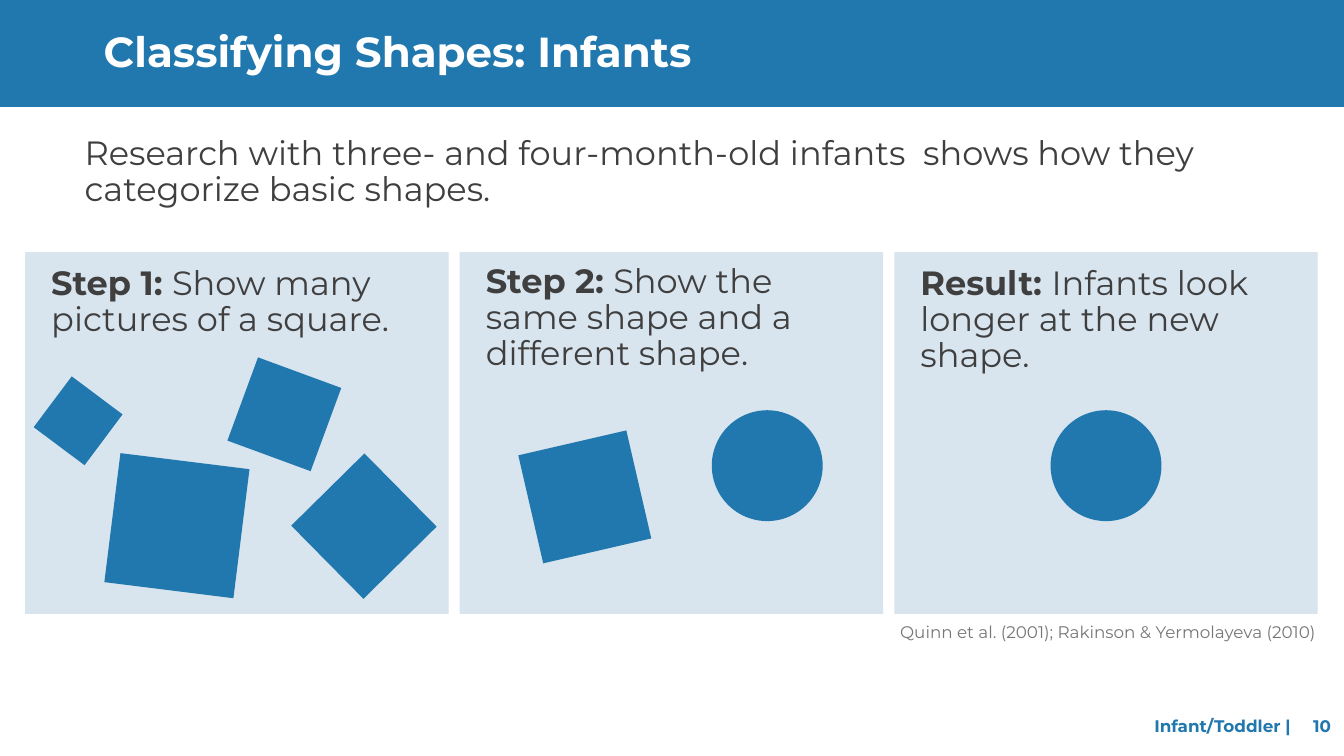
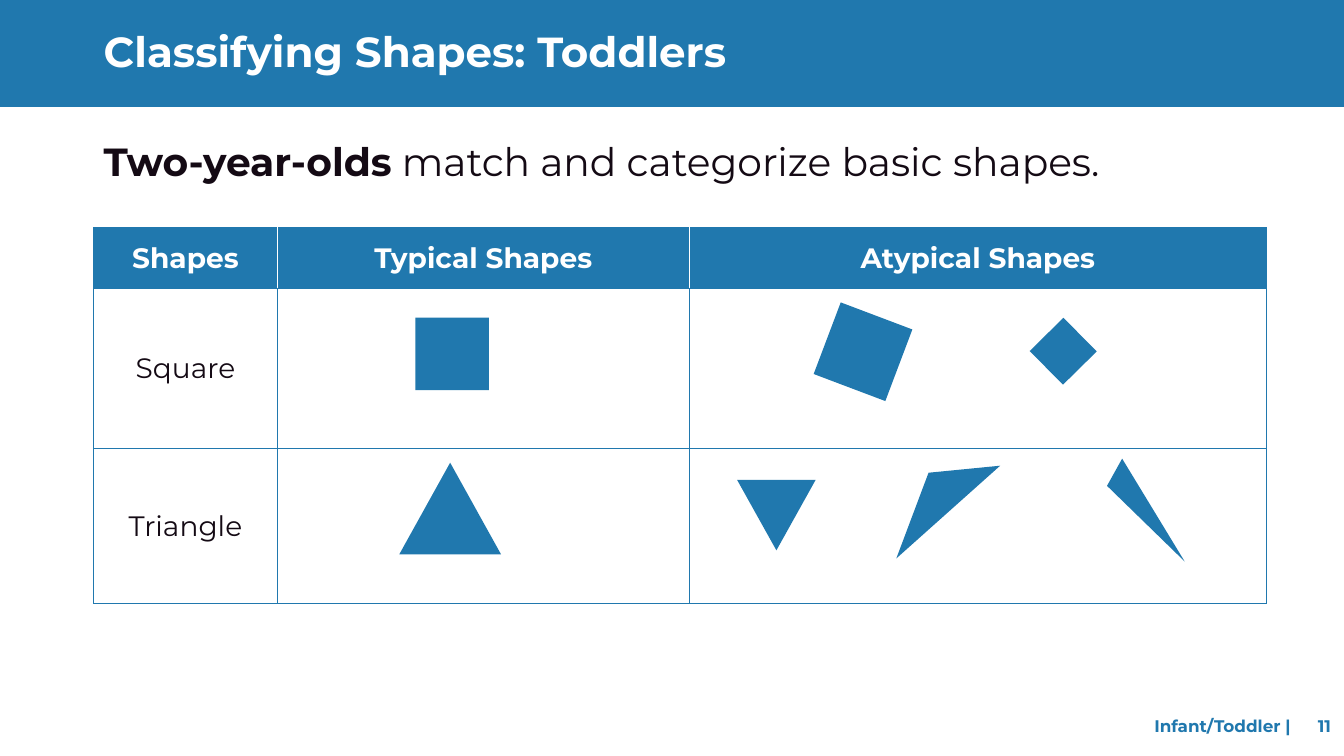
from lxml import etree
from pptx import Presentation
from pptx.dml.color import RGBColor
from pptx.enum.shapes import MSO_SHAPE
from pptx.enum.text import MSO_ANCHOR, PP_ALIGN
from pptx.oxml.ns import qn
from pptx.util import Inches, Pt

BLUE = RGBColor(0x20, 0x78, 0xAE)
PALE_BLUE = RGBColor(0xD8, 0xE4, 0xEE)
WHITE = RGBColor(0xFF, 0xFF, 0xFF)
DARK_GREY = RGBColor(0x3F, 0x3F, 0x3F)
MID_GREY = RGBColor(0x76, 0x76, 0x76)
NEAR_BLACK = RGBColor(0x14, 0x0A, 0x14)

FONT = "Montserrat"
RECTANGLE = MSO_SHAPE.RECTANGLE
OVAL = MSO_SHAPE.OVAL
TRIANGLE = MSO_SHAPE.ISOSCELES_TRIANGLE
LEFT, CENTER, RIGHT = PP_ALIGN.LEFT, PP_ALIGN.CENTER, PP_ALIGN.RIGHT
TOP, MIDDLE = MSO_ANCHOR.TOP, MSO_ANCHOR.MIDDLE

SLIDE_WIDTH, SLIDE_HEIGHT = 13.33, 7.5
PANEL_LEFT, PANEL_TOP, PANEL_WIDTH, PANEL_HEIGHT = 0.25, 2.5, 4.2, 3.59
PANEL_PITCH = 4.31

PANELS = [
    ("Step 1: ", "Show many pictures of a square.", 2.59),
    ("Step 2: ", "Show the same shape and a different shape.", 2.57),
    ("Result: ", "Infants look longer at the new shape.", 2.59),
]
INFANT_SQUARES = [
    (1.11, 4.57, 1.29, 7.1),
    (0.46, 3.86, 0.63, 36.8),
    (3.1, 4.71, 1.02, 315.4),
    (2.38, 3.67, 0.88, 20.2),
    (5.25, 4.38, 1.1, 347),
]
INFANT_CIRCLES = [(7.06, 4.07, 1.1), (10.42, 4.07, 1.1)]

TABLE_ROWS = [
    ("Shapes", "Typical Shapes", "Atypical Shapes"),
    ("Square", "", ""),
    ("Triangle", "", ""),
]
COLUMN_WIDTHS = (1.82, 4.09, 5.72)
ROW_HEIGHTS = (0.6, 1.59, 1.54)
TODDLER_SHAPES = [
    (RECTANGLE, 4.12, 3.15, 0.73, 0.72, 0),
    (RECTANGLE, 10.31, 3.25, 0.47, 0.47, 45.4),
    (RECTANGLE, 8.18, 3.11, 0.76, 0.76, 20.7),
    (TRIANGLE, 3.96, 4.59, 1.01, 0.91, 0),
    (TRIANGLE, 7.31, 4.76, 0.78, 0.7, 180),
]
SCALENE_TRIANGLES = [
    [(9.92, 4.62), (8.89, 5.54), (9.21, 4.69)],
    [(11.13, 4.55), (11.75, 5.57), (10.98, 4.82)],
]


def style_paragraph(paragraph, size, color, bold=None, align=LEFT, spacing=None):
    paragraph.alignment = align
    paragraph.line_spacing = spacing
    font = paragraph.font
    font.name = FONT
    font.size = Pt(size)
    font.color.rgb = color
    font.bold = bold


def add_text(slide, left, top, width, height, text, size, color,
             lead="", bold=None, align=LEFT, spacing=None, anchor=TOP):
    box = slide.shapes.add_textbox(Inches(left), Inches(top), Inches(width), Inches(height))
    frame = box.text_frame
    frame.word_wrap = True
    frame.vertical_anchor = anchor
    paragraph = frame.paragraphs[0]
    if lead:
        lead_run = paragraph.add_run()
        lead_run.text = lead
        lead_run.font.bold = True
    paragraph.add_run().text = text
    style_paragraph(paragraph, size, color, bold, align, spacing)


def paint(shape, color):
    shape.shadow.inherit = False
    shape.fill.solid()
    shape.fill.fore_color.rgb = color
    shape.line.fill.background()


def add_figure(slide, kind, left, top, width, height, rotation=0, color=BLUE):
    shape = slide.shapes.add_shape(kind, Inches(left), Inches(top), Inches(width), Inches(height))
    shape.rotation = rotation
    paint(shape, color)


def add_polygon(slide, points):
    corners = [(Inches(x), Inches(y)) for x, y in points]
    builder = slide.shapes.build_freeform(*corners[0])
    builder.add_line_segments(corners[1:], close=True)
    paint(builder.convert_to_shape(), BLUE)


def set_borders(cell, colors):
    properties = cell._tc.get_or_add_tcPr()
    for index, (tag, color) in enumerate(colors.items()):
        line = etree.Element(qn(tag), w=str(Pt(1)))
        fill = etree.SubElement(line, qn("a:solidFill"))
        etree.SubElement(fill, qn("a:srgbClr"), val=str(color))
        properties.insert(index, line)


def add_shape_table(slide):
    table = slide.shapes.add_table(
        len(ROW_HEIGHTS), len(COLUMN_WIDTHS), Inches(0.93), Inches(2.26),
        Inches(sum(COLUMN_WIDTHS)), Inches(sum(ROW_HEIGHTS))).table
    table.horz_banding = False
    for column, width in zip(table.columns, COLUMN_WIDTHS):
        column.width = Inches(width)
    last_column = len(COLUMN_WIDTHS) - 1
    for row_index, (height, texts) in enumerate(zip(ROW_HEIGHTS, TABLE_ROWS)):
        table.rows[row_index].height = Inches(height)
        header = row_index == 0
        inner = WHITE if header else BLUE
        for column_index, text in enumerate(texts):
            cell = table.cell(row_index, column_index)
            cell.text = text
            cell.vertical_anchor = MIDDLE
            cell.fill.solid()
            cell.fill.fore_color.rgb = BLUE if header else WHITE
            style_paragraph(cell.text_frame.paragraphs[0], 20,
                            WHITE if header else NEAR_BLACK, header, CENTER)
            set_borders(cell, {
                "a:lnL": inner if column_index > 0 else BLUE,
                "a:lnR": inner if column_index < last_column else BLUE,
                "a:lnT": BLUE,
                "a:lnB": BLUE,
            })


def add_base_slide(presentation, title, number):
    slide = presentation.slides.add_slide(presentation.slide_layouts[6])
    add_figure(slide, RECTANGLE, 0, 0, SLIDE_WIDTH, 1.06)
    add_text(slide, 0.93, 0.26, 11.85, 0.56, title, 30, WHITE, bold=True, spacing=0.9)
    for text, right in (("Infant/Toddler |", 12.9), (str(number), 13.3)):
        add_text(slide, right - 2, 7, 2, 0.4, text, 12, BLUE,
                 bold=True, align=RIGHT, anchor=MIDDLE)
    return slide


def add_infants_slide(presentation):
    slide = add_base_slide(presentation, "Classifying Shapes: Infants", 10)
    add_text(slide, 0.74, 1.3, 11.79, 0.89,
             "Research with three- and four-month-old infants  shows how they "
             "categorize basic shapes.", 24, DARK_GREY, spacing=0.9)
    for index, (lead, text, text_top) in enumerate(PANELS):
        left = PANEL_LEFT + index * PANEL_PITCH
        add_figure(slide, RECTANGLE, left, PANEL_TOP, PANEL_WIDTH, PANEL_HEIGHT, color=PALE_BLUE)
        add_text(slide, left + 0.16, text_top, 3.9, 1.32, text, 24, DARK_GREY,
                 lead=lead, spacing=0.9)
    for left, top, side, rotation in INFANT_SQUARES:
        add_figure(slide, RECTANGLE, left, top, side, side, rotation)
    for left, top, diameter in INFANT_CIRCLES:
        add_figure(slide, OVAL, left, top, diameter, diameter)
    add_text(slide, 0.12, 6.12, 13.03, 0.3,
             "Quinn et al. (2001); Rakinson & Yermolayeva (2010)", 12, MID_GREY, align=RIGHT)


def add_toddlers_slide(presentation):
    slide = add_base_slide(presentation, "Classifying Shapes: Toddlers", 11)
    add_text(slide, 0.93, 1.37, 11.85, 0.6, " match and categorize basic shapes.",
             28, NEAR_BLACK, lead="Two-year-olds", spacing=0.9)
    add_shape_table(slide)
    for figure in TODDLER_SHAPES:
        add_figure(slide, *figure)
    for points in SCALENE_TRIANGLES:
        add_polygon(slide, points)


def main():
    presentation = Presentation()
    presentation.slide_width = Inches(SLIDE_WIDTH)
    presentation.slide_height = Inches(SLIDE_HEIGHT)
    add_infants_slide(presentation)
    add_toddlers_slide(presentation)
    presentation.save("out.pptx")


if __name__ == "__main__":
    main()
